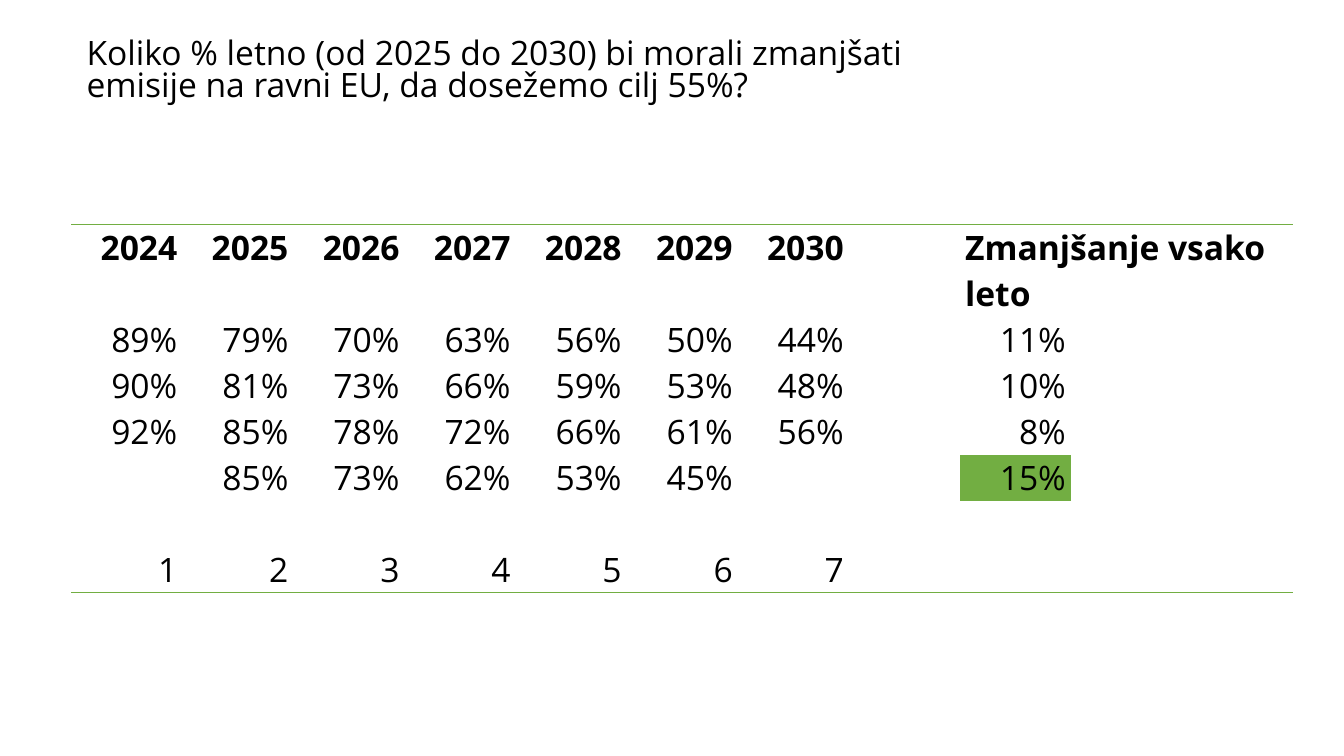
from dataclasses import dataclass

from pptx import Presentation
from pptx.dml.color import RGBColor
from pptx.enum.text import MSO_ANCHOR, MSO_AUTO_SIZE, PP_ALIGN
from pptx.oxml.ns import qn
from pptx.util import Cm, Pt
from lxml.etree import SubElement

# Content
TITLE = ("Koliko % letno (od 2025 do 2030) bi morali zmanjšati "
         "emisije na ravni EU, da dosežemo cilj 55%?")
REDUCTION_HEADING = "Zmanjšanje vsako leto"
ROWS = [
    ["2024", "2025", "2026", "2027", "2028", "2029", "2030", "", REDUCTION_HEADING],
    ["89%", "79%", "70%", "63%", "56%", "50%", "44%", "", "11%"],
    ["90%", "81%", "73%", "66%", "59%", "53%", "48%", "", "10%"],
    ["92%", "85%", "78%", "72%", "66%", "61%", "56%", "", "8%"],
    ["", "85%", "73%", "62%", "53%", "45%", "", "", "15%"],
    ["1", "2", "3", "4", "5", "6", "7"],
]
COLUMNS = 11
REDUCTION_COL = 8
ANSWER = (4, REDUCTION_COL)


@dataclass(frozen=True)
class Theme:
    font: str = "Open Sans"
    size: Pt = Pt(24)
    text: RGBColor = RGBColor(0x00, 0x00, 0x00)
    green: RGBColor = RGBColor(0x72, 0xAE, 0x42)
    rule: Pt = Pt(1)


THEME = Theme()

# Layout
LEFT = Cm(1.8)
TABLE_TOP = Cm(5.66)
COL_W = Cm(2.8)
LINE_H = Cm(1.16)
TWO_LINE_ROWS = (0, len(ROWS) - 1)


def add_text(p, text, bold=False):
    r = p.add_run()
    r.text = text
    font = r.font
    font.name, font.size, font.bold = THEME.font, THEME.size, bold
    font.color.rgb = THEME.text


def set_borders(cell, ruled_side):
    tc_pr = cell._tc.get_or_add_tcPr()
    for side in ("lnL", "lnR", "lnT", "lnB"):
        ln = SubElement(tc_pr, qn(f"a:{side}"), w=str(int(THEME.rule)))
        if side == ruled_side:
            fill = SubElement(ln, qn("a:solidFill"))
            SubElement(fill, qn("a:srgbClr"), val=str(THEME.green))
        else:
            SubElement(ln, qn("a:noFill"))


def add_title(s):
    sp = s.shapes.title
    sp.left, sp.top, sp.width, sp.height = LEFT, Cm(0.82), Cm(21.56), Cm(7.52)
    tf = sp.text_frame
    tf.word_wrap = True
    tf.auto_size = MSO_AUTO_SIZE.NONE
    tf.vertical_anchor = MSO_ANCHOR.TOP
    tf.margin_left = Cm(0.38)
    tf.margin_top = tf.margin_right = tf.margin_bottom = Cm(0.18)
    p = tf.paragraphs[0]
    p.alignment = PP_ALIGN.LEFT
    p.line_spacing = 0.8
    add_text(p, TITLE)


def add_emissions_table(s):
    last = len(ROWS) - 1
    heights = [LINE_H * (2 if i in TWO_LINE_ROWS else 1) for i in range(len(ROWS))]
    frame = s.shapes.add_table(len(ROWS), COLUMNS, LEFT, TABLE_TOP,
                               COL_W * COLUMNS, sum(heights))
    table = frame.table
    table.first_row = table.horz_banding = False
    for col in table.columns:
        col.width = COL_W
    for row, height in zip(table.rows, heights):
        row.height = height

    for i, values in enumerate(ROWS):
        for j in range(COLUMNS):
            cell = table.cell(i, j)
            cell.margin_left = cell.margin_right = Cm(0.13)
            cell.margin_top = cell.margin_bottom = 0
            cell.vertical_anchor = MSO_ANCHOR.BOTTOM if i == last else MSO_ANCHOR.TOP
            set_borders(cell, {0: "lnT", last: "lnB"}.get(i))
            if (i, j) == ANSWER:
                cell.fill.solid()
                cell.fill.fore_color.rgb = THEME.green
            else:
                cell.fill.background()
            text = values[j] if j < len(values) else ""
            if text:
                p = cell.text_frame.paragraphs[0]
                p.alignment = PP_ALIGN.LEFT if text == REDUCTION_HEADING else PP_ALIGN.RIGHT
                add_text(p, text, bold=i == 0)

    # Heading over the yearly reduction
    table.cell(0, REDUCTION_COL).merge(table.cell(0, COLUMNS - 1))


def main():
    prs = Presentation()
    prs.slide_width, prs.slide_height = Cm(33.87), Cm(19.05)
    s = prs.slides.add_slide(prs.slide_layouts[5])
    add_title(s)
    add_emissions_table(s)
    prs.save("out.pptx")


if __name__ == "__main__":
    main()
